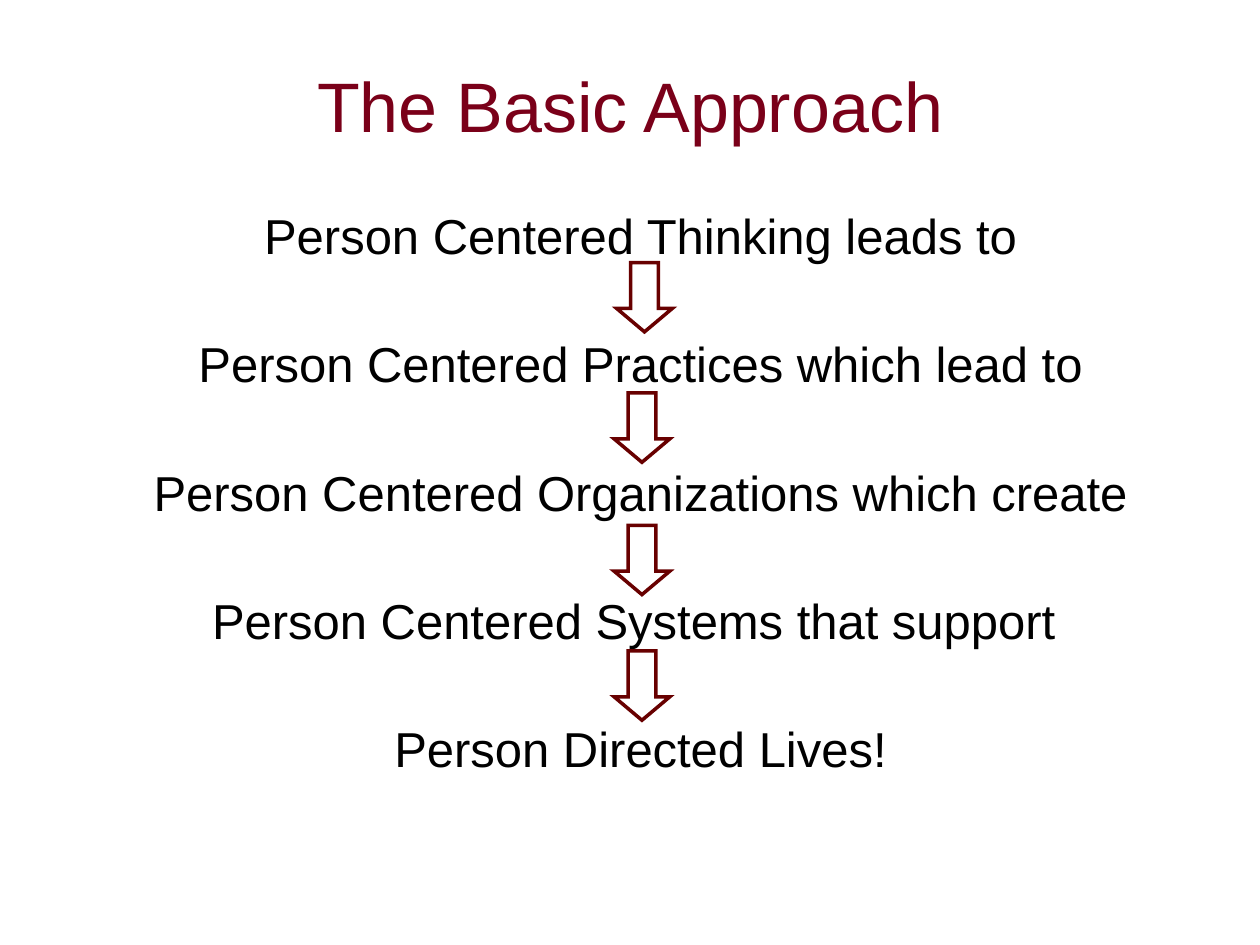
import lxml.etree
import pptx
import pptx.util
from pptx.dml.color import RGBColor
from pptx.enum.shapes import MSO_SHAPE
from pptx.enum.text import MSO_ANCHOR, PP_ALIGN
from pptx.oxml.ns import qn

MAROON = RGBColor(0x7A, 0x00, 0x19)
ARROW_RED = RGBColor(0x68, 0x00, 0x00)
BLACK = RGBColor(0x00, 0x00, 0x00)
WIDTH, HEIGHT = pptx.util.Inches(10), pptx.util.Inches(7.5)

TITLE_BOX = (0.025, 0.056, 0.95, 0.11)
STEPS_BOX = (0.0333, 0.211, 0.95, 0.644)
ARROW_SIZE = (0.055, 0.059)
ARROW_PLACES = [(0.484, 0.285), (0.482, 0.423), (0.482, 0.563), (0.482, 0.696)]
STEPS = [
    "Person Centered Thinking leads to",
    "Person Centered Practices which lead to",
    "Person Centered Organizations which create",
    "Person Centered Systems that support ",
    "Person Directed Lives!",
]


def scale(box):
    """Turn shares of the slide into lengths."""
    return [round(share * side) for share, side in zip(box, (WIDTH, HEIGHT) * 2)]


def add_lines(s, box, lines, size, color, gap=0):
    """Add a text box of centred lines and return its text frame."""
    tf = s.shapes.add_textbox(*scale(box)).text_frame
    tf.word_wrap = True
    for i, line in enumerate(lines):
        p = tf.paragraphs[0] if i == 0 else tf.add_paragraph()
        p.alignment = PP_ALIGN.CENTER
        p.space_before = pptx.util.Pt(gap if i else 0)
        r = p.add_run()
        r.text = line
        r.font.name = "Arial"
        r.font.size = pptx.util.Pt(size)
        r.font.color.rgb = color
    return tf


def add_title(s, box):
    """Add the slide title, centred in its box."""
    tf = add_lines(s, box, ["The Basic Approach"], 40, MAROON)
    tf.vertical_anchor = MSO_ANCHOR.MIDDLE


def add_steps(s, box):
    """Add the evenly spaced steps of the approach."""
    add_lines(s, box, STEPS, 28, BLACK, gap=39.7)


def add_arrow(s, box):
    """Add one sharp-cornered outlined arrow pointing down to the next step."""
    sp = s.shapes.add_shape(MSO_SHAPE.RIGHT_ARROW, *scale(box))
    sp.rotation = 90
    sp.adjustments[0] = 0.5
    sp.adjustments[1] = 0.42
    sp.shadow.inherit = False
    sp.fill.background()
    sp.line.color.rgb = ARROW_RED
    sp.line.width = pptx.util.Pt(2)
    ln = sp.element.spPr.find(qn("a:ln"))
    lxml.etree.SubElement(ln, qn("a:miter"), lim="800000")


def main():
    """Build and save the slide."""
    prs = pptx.Presentation()
    prs.slide_width, prs.slide_height = WIDTH, HEIGHT
    s = prs.slides.add_slide(prs.slide_layouts[6])
    add_title(s, TITLE_BOX)
    add_steps(s, STEPS_BOX)
    for place in ARROW_PLACES:
        add_arrow(s, place + ARROW_SIZE)
    prs.save("out.pptx")


if __name__ == "__main__":
    main()
